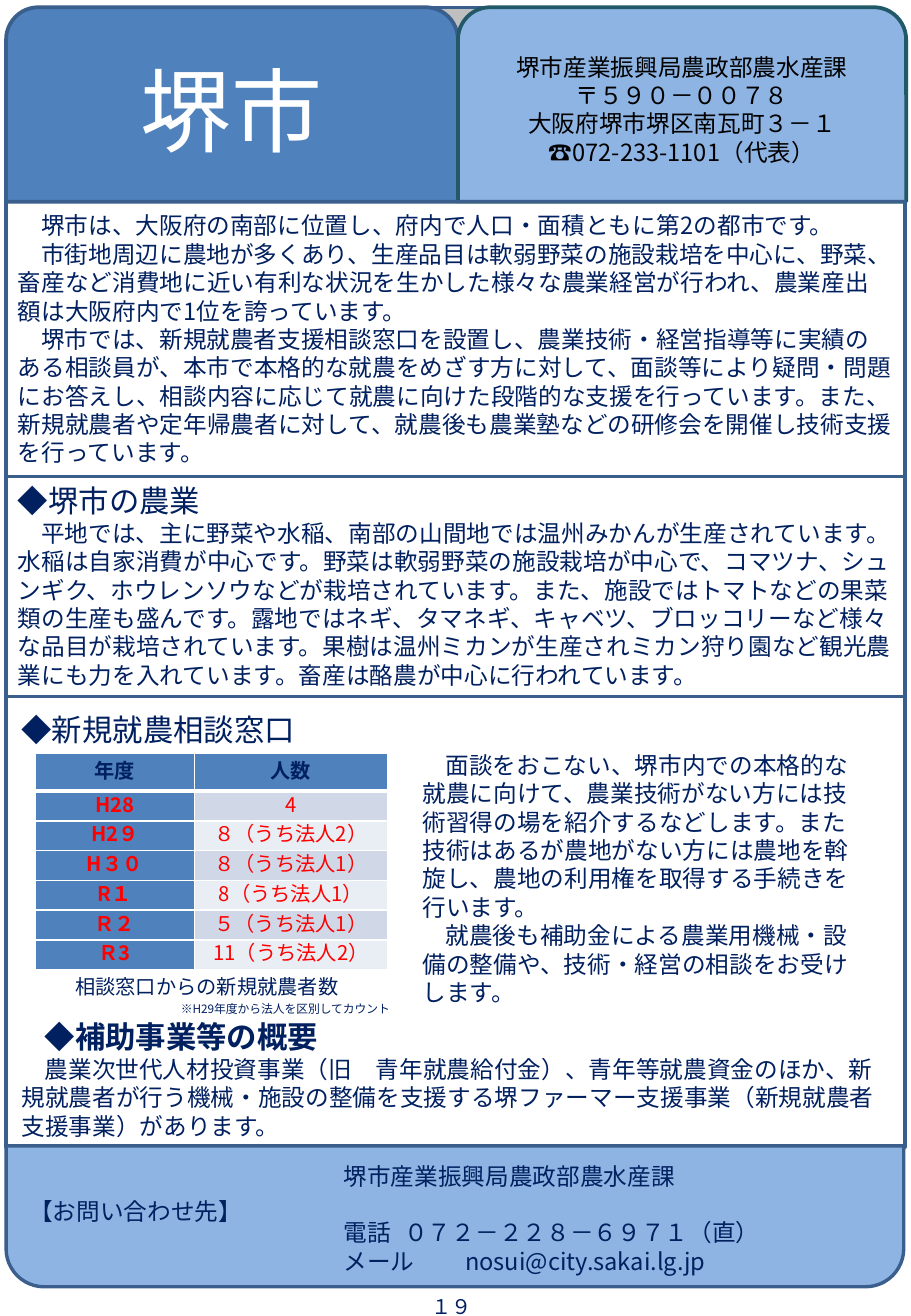
"""Build the one-page Sakai City farming guide and save it as out.pptx."""
from lxml.etree import SubElement
from pptx import Presentation
from pptx.dml.color import RGBColor
from pptx.enum.lang import MSO_LANGUAGE_ID as Language
from pptx.enum.shapes import MSO_SHAPE as Preset
from pptx.enum.text import MSO_ANCHOR as Anchor, PP_ALIGN as Align
from pptx.oxml.ns import qn
from pptx.util import Inches, Pt


class Theme:
    font, number_font = "Noto Sans CJK JP", "Calibri"
    title, heading, body, small, tiny = 54, 18, 14, 12, 7
    leading = 1.2
    navy, white, black, red = "002060", "FFFFFF", "000000", "FF0000"
    blue, sky, grey = "4F81BD", "8EB4E3", "BFBFBF"
    border, teal = "3A5F8C", "215968"
    bands = ("D0D8E8", "E9EDF4")


def add_text(frame, text, size=Theme.body, color=Theme.navy, font=Theme.font, bold=False,
             align=Align.LEFT, anchor=None, first_indent=0, left=0, before=0, tab=0):
    """Append one formatted paragraph, filling the first one when it is empty."""
    frame.word_wrap = True
    if anchor is not None:
        frame.vertical_anchor = anchor
    para = frame.paragraphs[0] if not frame.text else frame.add_paragraph()
    para.alignment = align
    para.line_spacing = Pt(round(size * Theme.leading, 1))
    if before:
        para.space_before = Pt(before)
    properties = para._p.get_or_add_pPr()
    properties.set("marL", str(Inches(left)))
    properties.set("indent", str(Inches(first_indent)))
    if tab:
        stops = SubElement(properties, qn("a:tabLst"))
        SubElement(stops, qn("a:tab"), pos=str(Inches(tab)), algn="l")
    span = para.add_run()
    span.text = text
    span.font.size, span.font.bold, span.font.name = Pt(size), bold, font
    span.font.color.rgb = RGBColor.from_string(color)
    span.font.language_id = Language.JAPANESE
    SubElement(span._r.get_or_add_rPr(), qn("a:ea"), typeface=font)


def add_panel(preset, place, fill=None, line=Theme.border, width=2, corners=()):
    """Add an outlined panel and return its text frame."""
    panel = page.shapes.add_shape(preset, *map(Inches, place))
    panel.shadow.inherit = False
    if fill:
        panel.fill.solid()
        panel.fill.fore_color.rgb = RGBColor.from_string(fill)
    else:
        panel.fill.background()
    panel.line.color.rgb = RGBColor.from_string(line)
    panel.line.width = Pt(width)
    for index, corner in enumerate(corners):
        panel.adjustments[index] = corner
    return panel.text_frame


deck = Presentation()
deck.slide_width, deck.slide_height = Inches(7.5), Inches(10.83)
page = deck.slides.add_slide(deck.slide_layouts[6])

add_panel(Preset.RECTANGLE, (3.4, 0.06, 0.73, 1.6), Theme.grey)
city = add_panel(Preset.ROUND_2_SAME_RECTANGLE, (0.05, 0.06, 3.72, 1.6), Theme.blue, width=2.25)
add_text(city, "堺市", size=Theme.title, color=Theme.white, align=Align.CENTER, anchor=Anchor.MIDDLE)

office = add_panel(Preset.ROUND_2_SAME_RECTANGLE, (3.77, 0.06, 3.69, 1.6), Theme.sky, Theme.teal, 2.25)
for line in ("堺市産業振興局農政部農水産課", "〒５９０－００７８",
             "大阪府堺市堺区南瓦町３－１", "☎072-233-1101（代表）"):
    add_text(office, line, color=Theme.black, align=Align.CENTER, anchor=Anchor.MIDDLE)

intro = add_panel(Preset.RECTANGLE, (0.05, 1.66, 7.4, 2.26))
for text in (
    "堺市は、大阪府の南部に位置し、府内で人口・面積ともに第2の都市です。",
    "市街地周辺に農地が多くあり、生産品目は軟弱野菜の施設栽培を中心に、野菜、"
    "畜産など消費地に近い有利な状況を生かした様々な農業経営が行われ、農業産出"
    "額は大阪府内で1位を誇っています。",
    "堺市では、新規就農者支援相談窓口を設置し、農業技術・経営指導等に実績の"
    "ある相談員が、本市で本格的な就農をめざす方に対して、面談等により疑問・問題"
    "にお答えし、相談内容に応じて就農に向けた段階的な支援を行っています。また、"
    "新規就農者や定年帰農者に対して、就農後も農業塾などの研修会を開催し技術支援"
    "を行っています。",
):
    add_text(intro, text, first_indent=0.19, anchor=Anchor.MIDDLE)

farming = add_panel(Preset.RECTANGLE, (0.05, 3.92, 7.4, 1.81))
add_text(farming, "◆堺市の農業", size=Theme.heading, anchor=Anchor.TOP)
add_text(farming, "平地では、主に野菜や水稲、南部の山間地では温州みかんが生産されています。",
         first_indent=0.19)
add_text(farming,
         "水稲は自家消費が中心です。野菜は軟弱野菜の施設栽培が中心で、コマツナ、シュ"
         "ンギク、ホウレンソウなどが栽培されています。また、施設ではトマトなどの果菜"
         "類の生産も盛んです。露地ではネギ、タマネギ、キャベツ、ブロッコリーなど様々"
         "な品目が栽培されています。果樹は温州ミカンが生産されミカン狩り園など観光農"
         "業にも力を入れています。畜産は酪農が中心に行われています。")

add_panel(Preset.ROUND_2_SAME_RECTANGLE, (0.05, 5.73, 7.4, 3.71), corners=(0, 0))

newcomers = (
    ("年度", "人数"),
    ("H28", "4"),
    ("H2９", "８（うち法人2）"),
    ("H３０", "８（うち法人1）"),
    ("R１", "8（うち法人1）"),
    ("Ｒ２", "５（うち法人1）"),
    ("Ｒ3", "11（うち法人2）"),
)
table = page.shapes.add_table(len(newcomers), 2, Inches(0.29), Inches(6.2),
                              Inches(2.9), Inches(1.78)).table
table.first_col = True
for column, width in zip(table.columns, (1.31, 1.59)):
    column.width = Inches(width)
for row, values in enumerate(newcomers):
    table.rows[row].height = Inches(0.245 if row else 0.31)
    for column, value in enumerate(values):
        cell = table.cell(row, column)
        cell.margin_left = cell.margin_right = Inches(0.07)
        cell.margin_top = cell.margin_bottom = 0
        cell.vertical_anchor = Anchor.MIDDLE
        label = row == 0 or column == 0
        add_text(cell.text_frame, value, size=Theme.small, bold=label, align=Align.CENTER,
                 color=Theme.red if row else Theme.navy)
        for side in ("lnL", "lnR", "lnT", "lnB"):
            heavy = (row, side) in ((0, "lnB"), (1, "lnT"))
            edge = SubElement(cell._tc.get_or_add_tcPr(), qn(f"a:{side}"), w=str(Pt(3 if heavy else 1)))
            SubElement(SubElement(edge, qn("a:solidFill")), qn("a:srgbClr"), val=Theme.white)
        cell.fill.solid()
        cell.fill.fore_color.rgb = RGBColor.from_string(
            Theme.blue if label else Theme.bands[(row - 1) % 2])

contact = add_panel(Preset.ROUND_2_SAME_RECTANGLE, (0.05, 9.43, 7.39, 1.16), Theme.sky,
                    corners=(0, 0.27))
add_text(contact, "【お問い合わせ先】", anchor=Anchor.MIDDLE)

heading = dict(size=Theme.heading)
indented = dict(first_indent=0.19)
tabbed = dict(tab=0.78)
text_boxes = (
    ((0.08, 5.8, 5.23, 0.4), (("◆新規就農相談窓口", heading),)),
    ((3.38, 6.13, 3.81, 2.22), (
        ("面談をおこない、堺市内での本格的な就農に向けて、農業技術がない方には技"
         "術習得の場を紹介するなどします。また技術はあるが農地がない方には農地を斡"
         "旋し、農地の利用権を取得する手続きを行います。", indented),
        ("就農後も補助金による農業用機械・設備の整備や、技術・経営の相談をお受けします。", indented))),
    ((0.08, 8.33, 7.37, 1.11), (
        ("◆補助事業等の概要", dict(heading, bold=True, **indented)),
        ("農業次世代人材投資事業（旧　青年就農給付金）、青年等就農資金のほか、新"
         "規就農者が行う機械・施設の整備を支援する堺ファーマー支援事業（新規就農者"
         "支援事業）があります。", indented))),
    ((2.73, 9.51, 4.02, 1.04), (
        ("堺市産業振興局農政部農水産課", {}),
        ("電話\t０７２－２２８－６９７１（直）", dict(tabbed, before=16.8)),
        ("メール\tnosui@city.sakai.lg.jp", tabbed))),
    ((0.52, 7.97, 2.52, 0.3), (("相談窓口からの新規就農者数", dict(size=Theme.small)),)),
    ((1.39, 8.19, 2.61, 0.22), (("※H29年度から法人を区別してカウント", dict(size=Theme.tiny)),)),
    ((2.23, 10.46, 1.75, 0.58), (
        ("１９", dict(size=Theme.small, font=Theme.number_font, align=Align.RIGHT,
                    anchor=Anchor.MIDDLE)),)),
)
for place, paragraphs in text_boxes:
    box = page.shapes.add_textbox(*map(Inches, place))
    for text, style in paragraphs:
        add_text(box.text_frame, text, **style)

deck.save("out.pptx")
